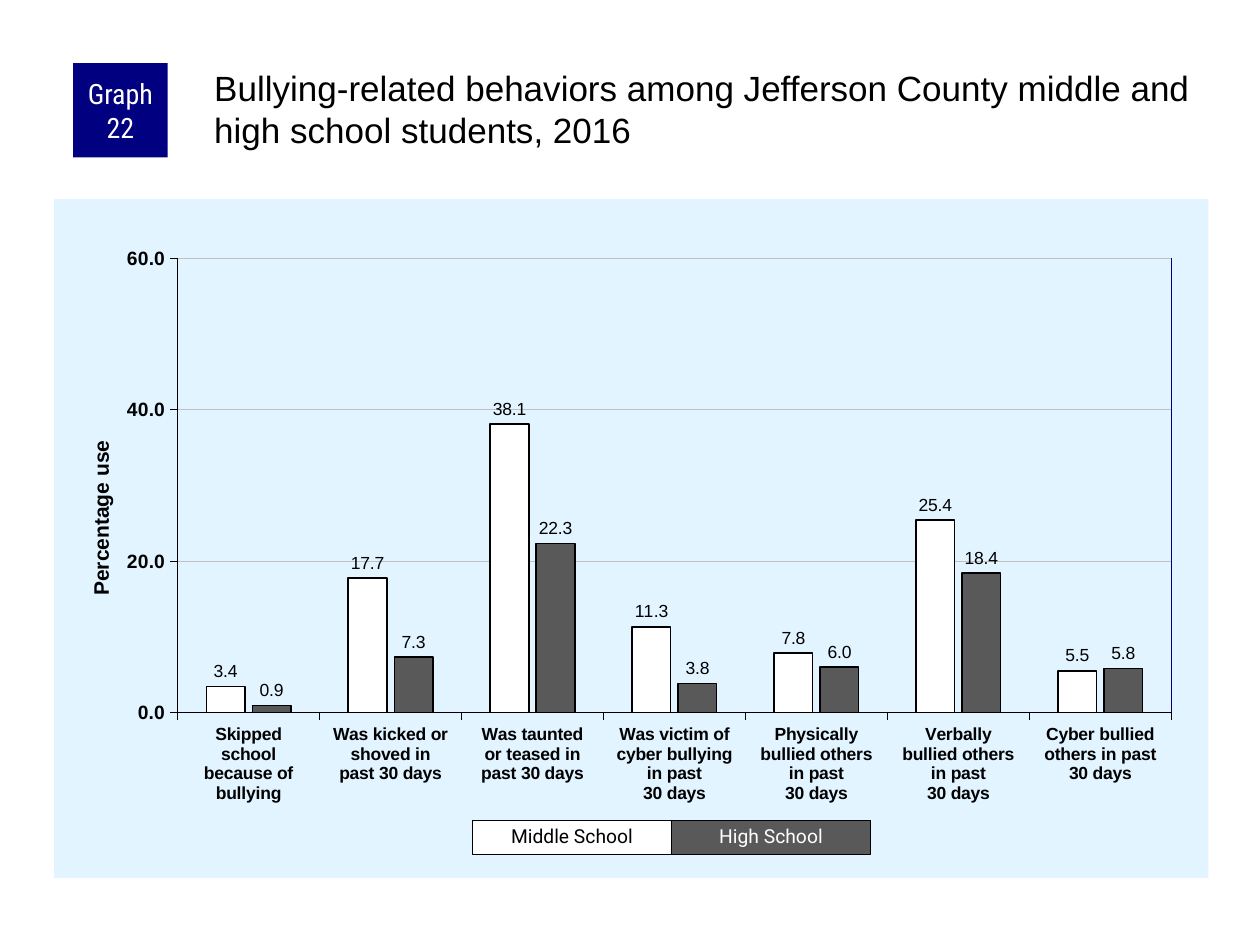
import pptx
import pptx.chart.data
import pptx.dml.color
import pptx.enum.chart
import pptx.enum.shapes
import pptx.enum.text
import pptx.oxml
import pptx.util
from pptx.oxml.ns import nsdecls, qn

Inches, Pt = pptx.util.Inches, pptx.util.Pt
ALIGN = pptx.enum.text.PP_ALIGN
ANCHOR = pptx.enum.text.MSO_ANCHOR

BLACK, WHITE, NAVY = "000000", "FFFFFF", "000080"
GRAY, GRID, PALE_BLUE = "595959", "C0C0C0", "E1F4FF"

CHART_BOX = (0.43, 1.58, 9.16, 5.39)
PLOT_SHARE = (0.107, 0.087, 0.861, 0.669)
CATEGORIES = [
    "Skipped\nschool\nbecause of\nbullying",
    "Was kicked or\nshoved in\npast 30 days",
    "Was taunted\nor teased in\npast 30 days",
    "Was victim of\ncyber bullying\nin past\n30 days",
    "Physically\nbullied others\nin past\n30 days",
    "Verbally\nbullied others\nin past\n30 days",
    "Cyber bullied\nothers in past\n30 days",
]
# name, bar colour, legend text colour, values
SCHOOLS = [
    ("Middle School", WHITE, BLACK, (3.4, 17.7, 38.1, 11.3, 7.8, 25.4, 5.5)),
    ("High School", GRAY, WHITE, (0.9, 7.3, 22.3, 3.8, 6.0, 18.4, 5.8)),
]


def rgb(color):
    return pptx.dml.color.RGBColor.from_string(color)


def style_font(font, size, color=BLACK, name="Arial", bold=False):
    font.size, font.name, font.bold = Pt(size), name, bold
    font.color.rgb = rgb(color)


def style_line(line, color, width):
    line.color.rgb = rgb(color)
    line.width = Pt(width)


def style_fill(fill, color):
    fill.solid()
    fill.fore_color.rgb = rgb(color)


def add_run(paragraph, text, size, color, font_name):
    run = paragraph.add_run()
    run.text = text
    style_font(run.font, size, color, font_name)


def add_box(slide, box, text, fill, size, color, font_name, border=False):
    """Add a rectangle with centred text and return its text frame."""
    shape = slide.shapes.add_shape(
        pptx.enum.shapes.MSO_SHAPE.RECTANGLE, *map(Inches, box))
    shape.shadow.inherit = False
    style_fill(shape.fill, fill)
    if border:
        style_line(shape.line, BLACK, 0.75)
    else:
        shape.line.fill.background()
    frame = shape.text_frame
    frame.word_wrap = True
    frame.vertical_anchor = ANCHOR.MIDDLE
    frame.paragraphs[0].alignment = ALIGN.CENTER
    add_run(frame.paragraphs[0], text, size, color, font_name)
    return frame


def add_title(slide):
    title = slide.shapes.title
    title.left, title.top, title.width, title.height = map(
        Inches, (1.67, 0.5, 7.92, 0.83))
    frame = title.text_frame
    frame.word_wrap = True
    frame.auto_size = pptx.enum.text.MSO_AUTO_SIZE.NONE
    frame.vertical_anchor = ANCHOR.TOP
    frame.margin_left = frame.margin_top = Inches(0.03)
    frame.margin_right = frame.margin_bottom = 0
    paragraph = frame.paragraphs[0]
    paragraph.alignment = ALIGN.LEFT
    add_run(paragraph, "Bullying-related behaviors among Jefferson County "
            "middle and high school students, 2016", 20, BLACK, "Arial")


def manual_layout(x, y, width=None, height=None):
    """Return a c:layout element, with lengths as shares of the chart."""
    parts = [("xMode", "edge"), ("yMode", "edge"), ("x", x), ("y", y)]
    if width is not None:
        parts = [("layoutTarget", "inner")] + parts + [("w", width), ("h", height)]
    inner = "".join(f'<c:{tag} val="{value}"/>' for tag, value in parts)
    return pptx.oxml.parse_xml(
        f'<c:layout {nsdecls("c")}><c:manualLayout>{inner}'
        '</c:manualLayout></c:layout>')


def remove_layout(element):
    for layout in element.findall(qn("c:layout")):
        element.remove(layout)


def style_axis(axis, size):
    axis.major_tick_mark = pptx.enum.chart.XL_TICK_MARK.OUTSIDE
    axis.minor_tick_mark = pptx.enum.chart.XL_TICK_MARK.NONE
    style_line(axis.format.line, BLACK, 0.25)
    style_font(axis.tick_labels.font, size, bold=True)


def style_value_axis(axis):
    style_axis(axis, 11)
    axis.minimum_scale, axis.maximum_scale, axis.major_unit = 0, 60, 20
    axis.tick_labels.number_format = "0.0"
    axis.tick_labels.number_format_is_linked = False
    axis.has_major_gridlines = True
    style_line(axis.major_gridlines.format.line, GRID, 0.25)
    frame = axis.axis_title.text_frame
    run = frame.paragraphs[0].add_run()
    run.text = "Percentage use"
    style_font(run.font, 12, bold=True)
    title = axis.axis_title.element if hasattr(axis.axis_title, "element") \
        else axis.axis_title._element
    title.find(".//" + qn("a:bodyPr")).set("rot", "-5400000")
    remove_layout(title)
    title.find(qn("c:tx")).addnext(manual_layout(0.026, 0.35))


def style_series(series, color):
    style_fill(series.format.fill, color)
    style_line(series.format.line, BLACK, 1)
    series.invert_if_negative = False
    labels = series.data_labels
    labels.show_value = True
    labels.number_format, labels.number_format_is_linked = "0.0", False
    labels.position = pptx.enum.chart.XL_LABEL_POSITION.OUTSIDE_END
    style_font(labels.font, 10)


def add_behavior_chart(slide):
    data = pptx.chart.data.CategoryChartData(number_format="0.0")
    data.categories = CATEGORIES
    for name, _, _, values in SCHOOLS:
        data.add_series(name, values)
    chart = slide.shapes.add_chart(
        pptx.enum.chart.XL_CHART_TYPE.COLUMN_CLUSTERED,
        *map(Inches, CHART_BOX), data).chart
    chart.has_legend = chart.has_title = False
    style_font(chart.font, 11.5)
    plot = chart.plots[0]
    plot.gap_width, plot.overlap, plot.vary_by_categories = 150, -20, False
    for series, (_, color, _, _) in zip(plot.series, SCHOOLS):
        style_series(series, color)
    style_axis(chart.category_axis, 10)
    style_value_axis(chart.value_axis)

    chart_space = chart._chartSpace
    chart_space.find(qn("c:chart")).addnext(pptx.oxml.parse_xml(
        f'<c:spPr {nsdecls("c", "a")}><a:solidFill><a:srgbClr '
        f'val="{PALE_BLUE}"/></a:solidFill><a:ln><a:noFill/></a:ln></c:spPr>'))
    plot_area = chart_space.find(".//" + qn("c:plotArea"))
    remove_layout(plot_area)
    plot_area.insert(0, manual_layout(*PLOT_SHARE))


def add_plot_edge(slide):
    """Draw the navy line along the right side of the plot."""
    left, top, width, height = CHART_BOX
    x_share, y_share, width_share, height_share = PLOT_SHARE
    x = Inches(left + width * (x_share + width_share))
    y = top + height * y_share
    edge = slide.shapes.add_connector(
        pptx.enum.shapes.MSO_CONNECTOR.STRAIGHT,
        x, Inches(y), x, Inches(y + height * height_share))
    style_line(edge.line, NAVY, 1)
    edge._element.spPr.append(
        pptx.oxml.parse_xml(f'<a:effectLst {nsdecls("a")}/>'))


def add_legend(slide):
    width = 1.58
    for column, (name, fill, color, _) in enumerate(SCHOOLS):
        frame = add_box(slide, (3.75 + column * width, 6.51, width, 0.27),
                        name, fill, 11, color, "Roboto", border=True)
        frame.auto_size = pptx.enum.text.MSO_AUTO_SIZE.SHAPE_TO_FIT_TEXT
        frame.paragraphs[0].line_spacing = 0.9


def main():
    presentation = pptx.Presentation()
    presentation.slide_width, presentation.slide_height = Inches(10), Inches(7.5)
    slide = presentation.slides.add_slide(presentation.slide_layouts[5])
    add_behavior_chart(slide)
    add_plot_edge(slide)
    badge = add_box(slide, (0.58, 0.5, 0.75, 0.75), "Graph 22", NAVY,
                    16, WHITE, "Roboto Condensed")
    badge.margin_left = badge.margin_right = Inches(0.05)
    badge.margin_top = badge.margin_bottom = 0
    add_title(slide)
    add_legend(slide)
    presentation.save("out.pptx")


if __name__ == "__main__":
    main()
